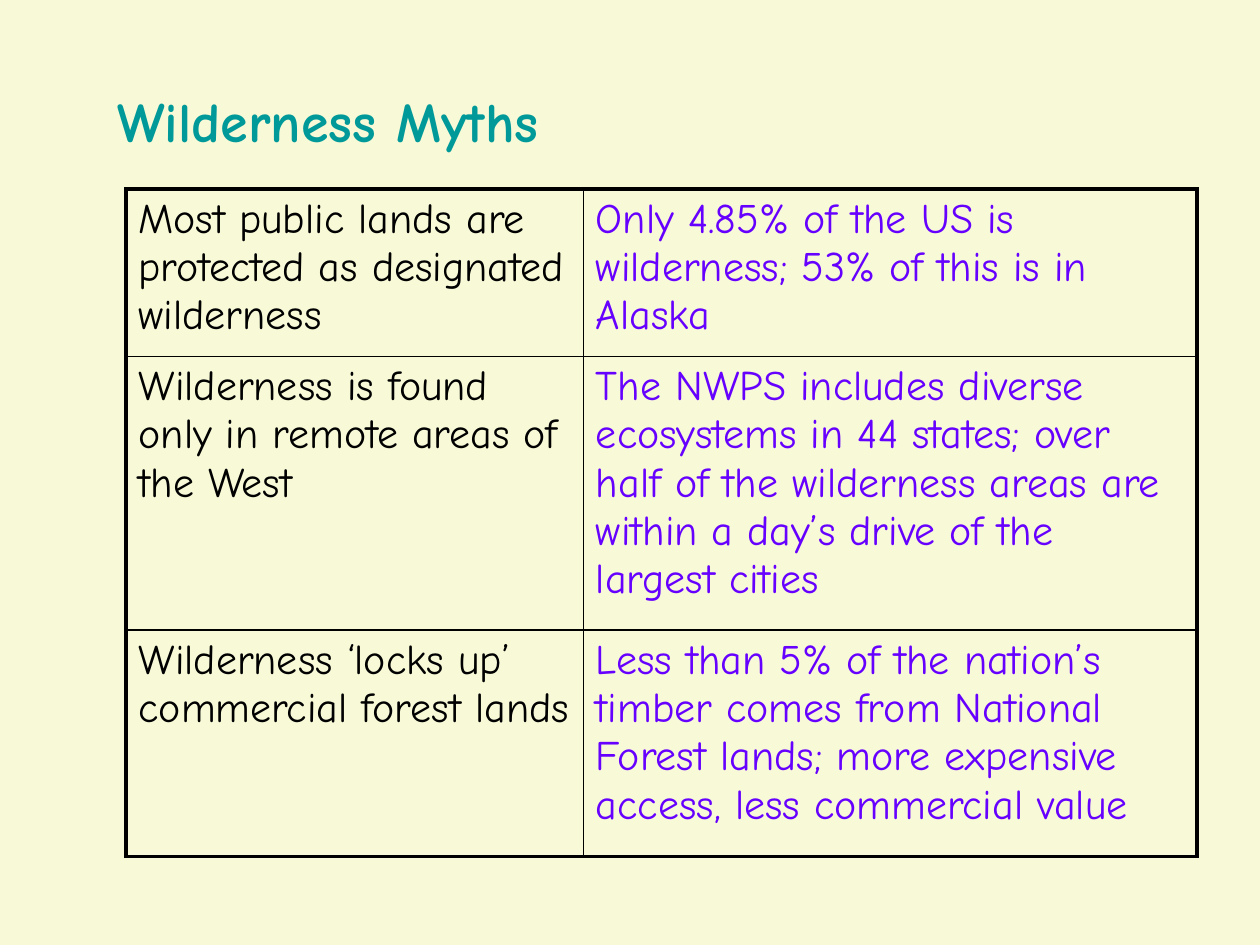
from lxml import etree
from pptx import Presentation
from pptx import util as u
from pptx.dml.color import RGBColor
from pptx.enum import text
from pptx.oxml import ns

CREAM = RGBColor(0xF8, 0xF9, 0xD7)
TEAL = RGBColor(0x00, 0x99, 0x99)
BLACK = RGBColor(0x00, 0x00, 0x00)
VIOLET = RGBColor(0x66, 0x00, 0xFF)

HEADING = "Wilderness Myths"
MYTHS = [
    ("Most public lands are protected as designated wilderness",
     "Only 4.85% of the US is wilderness; 53% of this is in Alaska"),
    ("Wilderness is found only in remote areas of the West",
     "The NWPS includes diverse ecosystems in 44 states; over half of the "
     "wilderness areas are within a day’s drive of the largest cities"),
    ("Wilderness ‘locks up’ commercial forest lands",
     "Less than 5% of the nation’s timber comes from National Forest lands; "
     "more expensive access, less commercial value"),
]
COLUMN_WIDTHS = [3.63, 4.87]
ROW_HEIGHTS = [1.33, 2.17, 1.8]
COLUMN_COLORS = [BLACK, VIOLET]
OUTER, INNER = 2.25, 1

HEADING_FONT = {"name": "Comic Neue", "size": u.Pt(32), "bold": True}
CELL_FONT = {"name": "Comic Neue", "size": u.Pt(24), "bold": False}


def format_font(font, values, color):
    for key, value in values.items():
        setattr(font, key, value)
    font.color.rgb = color


def add_border(cell, side, points):
    properties = cell._tc.get_or_add_tcPr()
    line = etree.SubElement(properties, ns.qn(f"a:ln{side}"), w=str(u.Pt(points)))
    fill = etree.SubElement(line, ns.qn("a:solidFill"))
    etree.SubElement(fill, ns.qn("a:srgbClr"), val=str(BLACK))


deck = Presentation()
deck.slide_width, deck.slide_height = u.Inches(10), u.Inches(7.5)
slide = deck.slides.add_slide(deck.slide_layouts[5])
slide.background.fill.solid()
slide.background.fill.fore_color.rgb = CREAM

heading = slide.shapes.title
heading_box = {"left": 0.83, "top": 0.58, "width": 4.58, "height": 0.75}
for side, inches in heading_box.items():
    setattr(heading, side, u.Inches(inches))
heading.text_frame.text = HEADING
heading.text_frame.vertical_anchor = text.MSO_ANCHOR.MIDDLE
heading_line = heading.text_frame.paragraphs[0]
heading_line.alignment = text.PP_ALIGN.LEFT
format_font(heading_line.runs[0].font, HEADING_FONT, TEAL)

myths = slide.shapes.add_table(
    len(MYTHS), len(COLUMN_WIDTHS), u.Inches(1), u.Inches(1.5),
    u.Inches(sum(COLUMN_WIDTHS)), u.Inches(sum(ROW_HEIGHTS))).table
myths.first_row = myths.horz_banding = False
for column, width in zip(myths.columns, COLUMN_WIDTHS):
    column.width = u.Inches(width)
for row, height in zip(myths.rows, ROW_HEIGHTS):
    row.height = u.Inches(height)

last_row, last_column = len(MYTHS) - 1, len(COLUMN_WIDTHS) - 1
for r, statements in enumerate(MYTHS):
    for c, statement in enumerate(statements):
        cell = myths.cell(r, c)
        cell.text = statement
        format_font(cell.text_frame.paragraphs[0].runs[0].font,
                    CELL_FONT, COLUMN_COLORS[c])
        outer_sides = {"L": c == 0, "R": c == last_column,
                       "T": r == 0, "B": r == last_row}
        for side, is_outer in outer_sides.items():
            add_border(cell, side, OUTER if is_outer else INNER)
        cell.fill.background()

deck.save("out.pptx")
